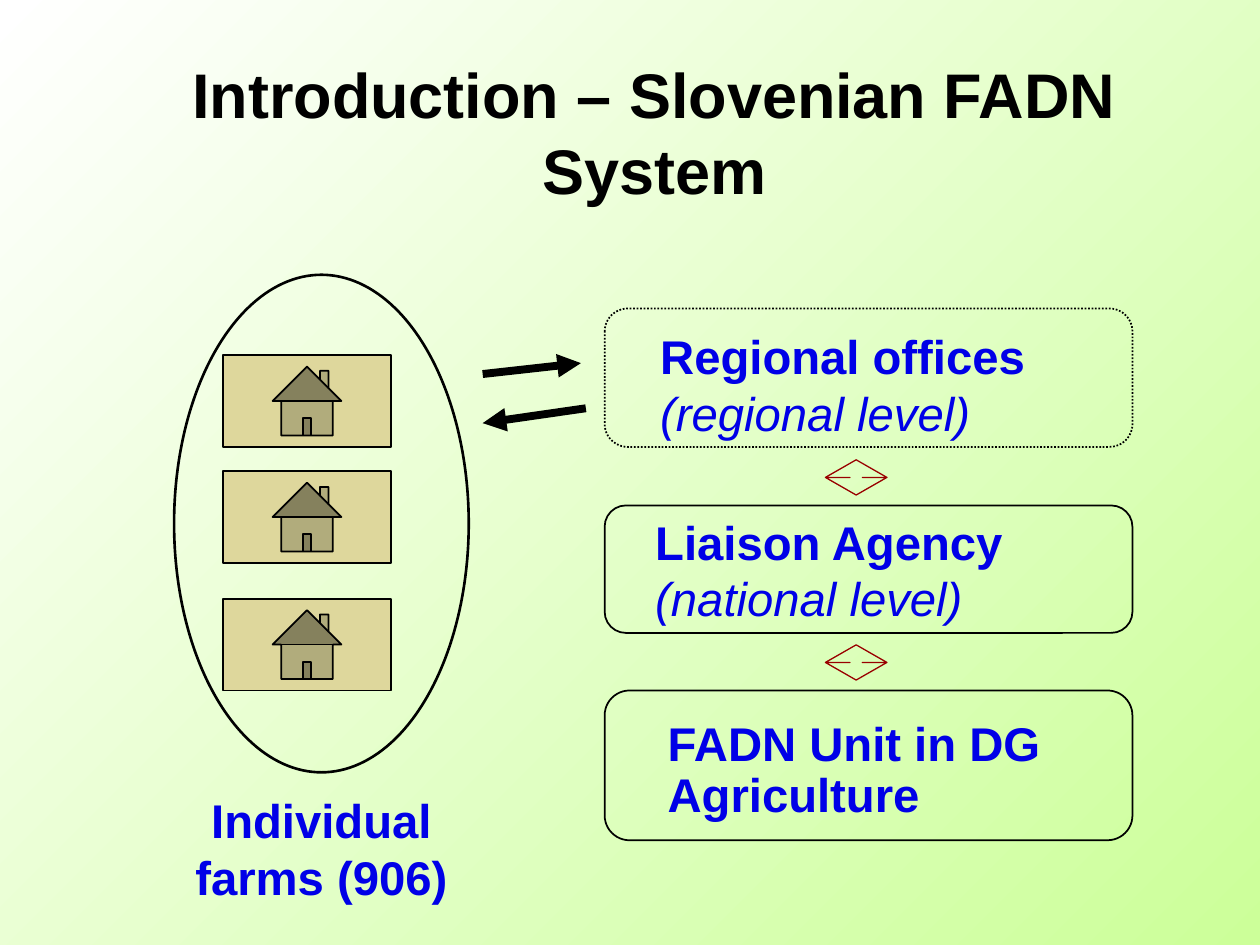
import pptx
import pptx.util
import pptx.dml.color
import pptx.enum.dml
import pptx.enum.shapes
import pptx.enum.text
import lxml.etree

Cm = pptx.util.Cm
Pt = pptx.util.Pt
KIND = pptx.enum.shapes.MSO_SHAPE
ALIGN = pptx.enum.text.PP_ALIGN
DASH = pptx.enum.dml.MSO_LINE
HUES = {"ink": "000000", "blue": "0000E7", "sand": "DED79C",
        "red": "990000", "white": "FFFFFF", "lime": "CCFF99"}
NS = "{http://schemas.openxmlformats.org/drawingml/2006/main}"


class Deck:
    font = "Arial"

    def __init__(self):
        self.file = pptx.Presentation()
        self.file.slide_width, self.file.slide_height = Cm(25.4), Cm(19.05)
        self.slide = self.file.slides.add_slide(self.file.slide_layouts[6])

    def hue(self, name):
        return pptx.dml.color.RGBColor.from_string(HUES[name])

    def back(self, start, end):
        fill = self.slide.background.fill
        fill.gradient()
        fill.gradient_angle = 315
        for stop, name in zip(fill.gradient_stops, (start, end)):
            stop.color.rgb = self.hue(name)

    def shape(self, kind, box, fill=None, line="ink", width=1, dash=None):
        item = self.slide.shapes.add_shape(kind, *map(Cm, box))
        item.shadow.inherit = False
        if fill:
            item.fill.solid()
            item.fill.fore_color.rgb = self.hue(fill)
        else:
            item.fill.background()
        item.line.color.rgb = self.hue(line)
        item.line.width = Pt(width)
        if dash:
            item.line.dash_style = dash
        return item

    def text(self, box, runs, size=27, hue="blue", align=ALIGN.LEFT,
             pad=(0.28, 0.15), space=None):
        frame = self.slide.shapes.add_textbox(*map(Cm, box)).text_frame
        frame.word_wrap = True
        frame.margin_left = frame.margin_right = Cm(pad[0])
        frame.margin_top = frame.margin_bottom = Cm(pad[1])
        para = frame.paragraphs[0]
        para.alignment = align
        para.line_spacing = space
        for words, bold in runs:
            run = para.add_run()
            run.text = words
            run.font.name = self.font
            run.font.size = Pt(size)
            run.font.bold = bold
            run.font.italic = not bold
            run.font.color.rgb = self.hue(hue)

    def arrow(self, start, end, width=4.5):
        item = self.slide.shapes.add_connector(
            pptx.enum.shapes.MSO_CONNECTOR.STRAIGHT, *map(Cm, start + end))
        item.line.color.rgb = self.hue("ink")
        item.line.width = Pt(width)
        line = item.line._get_or_add_ln()
        lxml.etree.SubElement(line, NS + "tailEnd", type="triangle")
        lxml.etree.SubElement(item._element.spPr, NS + "effectLst")


def main():
    deck = Deck()
    deck.back("white", "lime")
    deck.text((2.74, 0.99, 20.9, 3.33),
              [("Introduction – Slovenian FADN System", True)],
              size=36, hue="ink", align=ALIGN.CENTER, pad=(0.25, 0.13))

    for top in (7.16, 9.5, 12.07):
        deck.shape(KIND.ACTION_BUTTON_HOME, (4.5, top, 3.38, 1.85), "sand")
    deck.shape(KIND.OVAL, (3.51, 5.54, 5.94, 10.03), width=1.5)
    deck.text((2.77, 15.8, 7.42, 2.59), [("Individual farms (906)", True)],
              align=ALIGN.CENTER)

    levels = [
        (6.22, 2.79, DASH.ROUND_DOT, (13.03, 6.45, 10.13, 2.59), None,
         [("Regional offices ", True), ("(regional level)", False)]),
        (10.19, 2.57, None, (12.93, 10.19, 9.65, 2.59), None,
         [("Liaison Agency ", True), ("(national level)", False)]),
        (13.92, 3.02, None, (13.18, 14.38, 11.38, 2.36), 0.9,
         [("FADN Unit in DG Agriculture", True)]),
    ]
    for top, high, dash, box, space, runs in levels:
        deck.shape(KIND.FLOWCHART_ALTERNATE_PROCESS,
                   (12.19, top, 10.64, high), dash=dash)
        deck.text(box, runs, space=space)

    for top in (9.27, 13):
        link = deck.shape(KIND.UP_DOWN_ARROW, (16.64, top, 1.24, 0.71),
                          line="red", width=0.75)
        link.adjustments[0], link.adjustments[1] = 0.5, 0.2

    deck.arrow((9.73, 7.54), (11.71, 7.32))
    deck.arrow((11.81, 8.23), (9.73, 8.53))
    deck.file.save("out.pptx")


if __name__ == "__main__":
    main()
